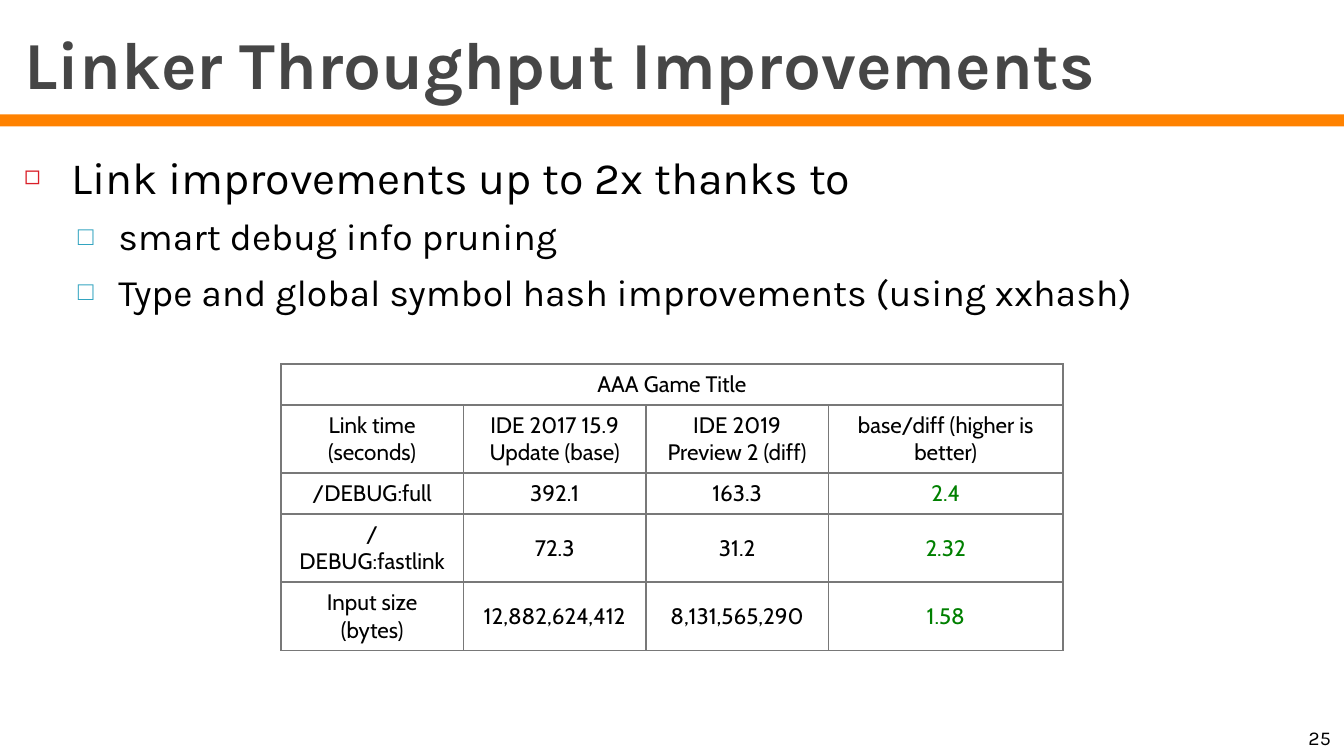
from lxml import etree
from pptx import Presentation, util as u
from pptx.dml.color import RGBColor
from pptx.enum import shapes, text
from pptx.oxml import ns

BLACK, GREEN, WHITE = "000000", "008000", "FFFFFF"

BULLETS = [
    (0, "Link improvements up to 2x thanks to"),
    (1, "smart debug info pruning"),
    (1, "Type and global symbol hash improvements (using xxhash)"),
]
# size, space before, left indent, hanging indent, bullet, bullet colour, bullet size in %
LEVELS = [
    (24, 7, 0.35, 0.35, "◻", "DA1F28", 60),
    (20, 5.5, 0.7, 0.3, "□", "2DA2BF", 70),
]

TABLE_TITLE = "AAA Game Title"
TABLE_ROWS = [
    ("Link time (seconds)", "IDE 2017 15.9 Update (base)",
     "IDE 2019 Preview 2 (diff)", "base/diff (higher is better)"),
    ("/DEBUG:full", "392.1", "163.3", "2.4"),
    ("/DEBUG:fastlink", "72.3", "31.2", "2.32"),
    ("Input size (bytes)", "12,882,624,412", "8,131,565,290", "1.58"),
]
COLUMN_WEIGHTS = [7, 7, 7, 9]
ROW_LINES = [1, 2, 1, 2, 2]
CELL_MARGINS, LINE_HEIGHT = 7.2, 14.7  # points


def colour(value):
    return RGBColor.from_string(value)


def grid_box(deck, left, top, width, height):
    """Turn columns and rows of a 100 by 100 slide grid into lengths."""
    column, row = deck.slide_width / 100, deck.slide_height / 100
    return [u.Emu(round(n)) for n in
            (left * column, top * row, width * column, height * row)]


def place(shape, box):
    shape.left, shape.top, shape.width, shape.height = box


def add_span(para, words, size, font="Karla", shade=BLACK, bold=False):
    span = para.add_run()
    span.text = words
    span.font.size = u.Pt(size)
    span.font.name = font
    span.font.bold = bold
    span.font.color.rgb = colour(shade)


def add_child(parent, tag, **attributes):
    return etree.SubElement(parent, ns.qn(tag), attributes)


def add_title(page, box):
    title = page.shapes.title
    place(title, box)
    frame = title.text_frame
    frame.auto_size = text.MSO_AUTO_SIZE.NONE
    frame.vertical_anchor = text.MSO_ANCHOR.BOTTOM
    para = frame.paragraphs[0]
    para.alignment = text.PP_ALIGN.LEFT
    add_span(para, "Linker Throughput Improvements", 36, shade="464646", bold=True)


def add_rule(page, box):
    rule = page.shapes.add_shape(shapes.MSO_SHAPE.RECTANGLE, *box)
    rule.shadow.inherit = False
    rule.fill.solid()
    rule.fill.fore_color.rgb = colour("FF8200")
    rule.line.fill.background()


def set_bullet(para, indent, hanging, mark, shade, percent):
    properties = para._p.get_or_add_pPr()
    properties.set("marL", str(u.Inches(indent)))
    properties.set("indent", str(-u.Inches(hanging)))
    add_child(add_child(properties, "a:buClr"), "a:srgbClr", val=shade)
    add_child(properties, "a:buSzPct", val=str(percent * 1000))
    add_child(properties, "a:buChar", char=mark)


def add_bullets(page, box):
    body = page.placeholders[1]
    place(body, box)
    frame = body.text_frame
    frame.auto_size = text.MSO_AUTO_SIZE.NONE
    for index, (level, words) in enumerate(BULLETS):
        para = frame.add_paragraph() if index else frame.paragraphs[0]
        size, before, *bullet = LEVELS[level]
        para.level = level
        set_bullet(para, *bullet)
        para.space_before = u.Pt(before if index else 0)
        add_span(para, words, size)


def format_cell(cell):
    properties = cell._tc.get_or_add_tcPr()
    for side in ("a:lnL", "a:lnR", "a:lnT", "a:lnB"):
        border = add_child(properties, side, w=str(u.Pt(1)))
        add_child(add_child(border, "a:solidFill"), "a:srgbClr", val="787878")
    cell.fill.solid()
    cell.fill.fore_color.rgb = colour(WHITE)
    cell.vertical_anchor = text.MSO_ANCHOR.MIDDLE


def fill_cell(cell, words, shade=BLACK):
    para = cell.text_frame.paragraphs[0]
    para.alignment = text.PP_ALIGN.CENTER
    add_span(para, words, 12, "Cabin", shade)


def add_timings(page, box):
    table = page.shapes.add_table(len(ROW_LINES), len(COLUMN_WEIGHTS), *box).table
    table.first_row = table.horz_banding = False
    for column, weight in zip(table.columns, COLUMN_WEIGHTS):
        column.width = u.Emu(round(box[2] * weight / sum(COLUMN_WEIGHTS)))
    for row, lines in zip(table.rows, ROW_LINES):
        row.height = u.Pt(CELL_MARGINS + LINE_HEIGHT * lines)
    for cell in table.iter_cells():
        format_cell(cell)
    last = len(COLUMN_WEIGHTS) - 1
    table.cell(0, 0).merge(table.cell(0, last))
    fill_cell(table.cell(0, 0), TABLE_TITLE)
    for r, values in enumerate(TABLE_ROWS, start=1):
        for c, words in enumerate(values):
            is_ratio = r > 1 and c == last
            fill_cell(table.cell(r, c), words, GREEN if is_ratio else BLACK)


def add_page_number(page, box):
    frame = page.shapes.add_textbox(*box).text_frame
    frame.word_wrap = True
    frame.vertical_anchor = text.MSO_ANCHOR.BOTTOM
    para = frame.paragraphs[0]
    para.alignment = text.PP_ALIGN.RIGHT
    add_span(para, "25", 10.5)


def main():
    deck = Presentation()
    deck.slide_width = u.Inches(10)
    deck.slide_height = u.Emu(deck.slide_width * 9 // 16)
    page = deck.slides.add_slide(deck.slide_layouts[1])
    add_rule(page, grid_box(deck, 0, 15.12, 100, 1.6))
    add_page_number(page, grid_box(deck, 93.7, 94.9, 6.3, 5.1))
    add_title(page, grid_box(deck, 0.8, 2.35, 98.3, 12.1))
    add_bullets(page, grid_box(deck, 0.8, 18.9, 98.3, 80))
    add_timings(page, grid_box(deck, 20.9, 48.15, 58.2, 37.9))
    deck.save("out.pptx")


if __name__ == "__main__":
    main()
